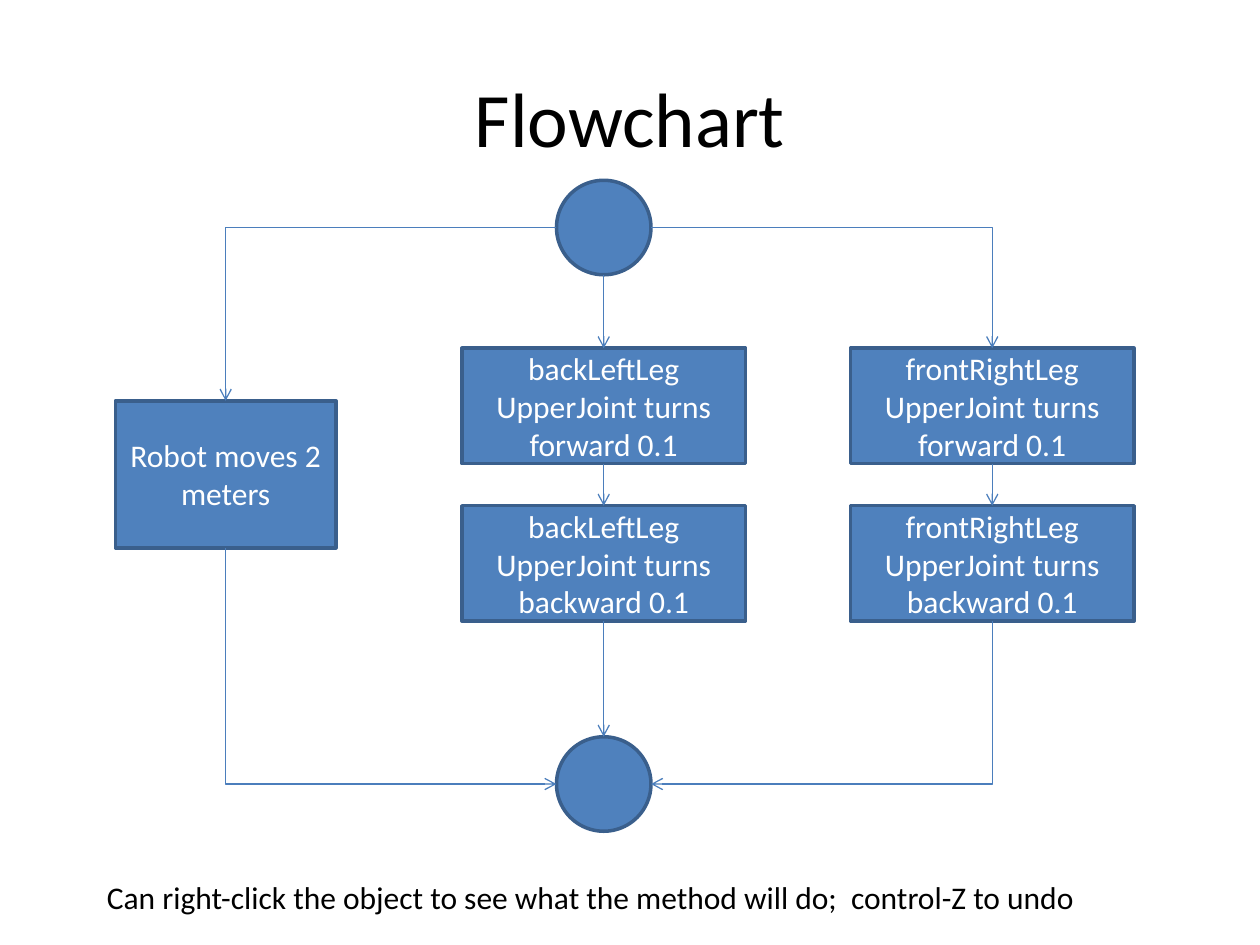
from pptx import Presentation
from pptx.util import Pt
from pptx.dml.color import RGBColor
from pptx.enum.shapes import MSO_SHAPE as Kind, MSO_CONNECTOR as Link
from pptx.enum.text import PP_ALIGN as Align, MSO_ANCHOR as Anchor, MSO_AUTO_SIZE as Auto
from pptx.oxml.ns import qn
from lxml.etree import SubElement

tint = RGBColor.from_string


def put(frame, text, size, hue, align):
    frame.vertical_anchor = Anchor.MIDDLE
    para = frame.paragraphs[0]
    para.alignment = align
    run = para.add_run()
    run.text = text
    run.font.size = Pt(size)
    run.font.name = "Calibri"
    run.font.color.rgb = tint(hue)


def node(kind, x, y, w, h):
    shape = slide.shapes.add_shape(kind, Pt(x), Pt(y), Pt(w), Pt(h))
    shape.shadow.inherit = False
    shape.fill.solid()
    shape.fill.fore_color.rgb = tint("4F81BD")
    shape.line.color.rgb = tint("3A5F8C")
    shape.line.width = Pt(2)
    return shape


deck = Presentation()
deck.slide_width, deck.slide_height = Pt(720), Pt(540)
slide = deck.slides.add_slide(deck.slide_layouts[5])

title = slide.shapes.title
title.left, title.top, title.width, title.height = Pt(36), Pt(21.6), Pt(648), Pt(90)
put(title.text_frame, "Flowchart", 44, "000000", Align.CENTER)

left, mid, right = 129, 345, 567
start, end, rad = 130, 448, 27
first, second, tall = 199, 289, 66
top, base = 229, 313

for y in (start, end):
    node(Kind.FLOWCHART_CONNECTOR, mid - rad, y - rad, 2 * rad, 2 * rad)

steps = [(left, top, 126, base - top, "Robot moves 2 meters")]
for x, leg in ((mid, "backLeftLeg"), (right, "frontRightLeg")):
    for y, way in ((first, "forward"), (second, "backward")):
        steps.append((x, y, 162, tall, f"{leg} UpperJoint turns {way} 0.1"))
for x, y, w, h, text in steps:
    box = node(Kind.FLOWCHART_PROCESS, x - w / 2, y, w, h)
    put(box.text_frame, text, 18, "FFFFFF", Align.CENTER)

arrows = [
    (mid, start + rad, mid, first, "line"),
    (mid, first + tall, mid, second, "line"),
    (mid, second + tall, mid, end - rad, "line"),
    (right, first + tall, right, second, "line"),
    (mid + rad, start, right, first, "across"),
    (mid - rad, start, left, top, "across"),
    (left, base, mid - rad, end, "down"),
    (right, second + tall, mid + rad, end, "down"),
]
for x1, y1, x2, y2, turn in arrows:
    link = Link.STRAIGHT if turn == "line" else Link.ELBOW
    arrow = slide.shapes.add_connector(link, Pt(x1), Pt(y1), Pt(x2), Pt(y2))
    arrow.line.color.rgb = tint("4B7EBC")
    arrow.line.width = Pt(0.75)
    props = arrow.element.spPr
    SubElement(props.find(qn("a:ln")), qn("a:tailEnd"), type="arrow")
    SubElement(props, qn("a:effectLst"))
    if turn != "line":
        props.find(qn("a:prstGeom")).set("prst", "bentConnector2")
    if turn == "down":
        w, h = abs(y2 - y1), abs(x2 - x1)
        arrow.left, arrow.top = Pt((x1 + x2 - w) / 2), Pt((y1 + y2 - h) / 2)
        arrow.width, arrow.height = Pt(w), Pt(h)
        form = props.find(qn("a:xfrm"))
        form.set("rot", str((270 if x2 > x1 else 90) * 60000))
        form.set("flipH", "1" if x2 > x1 else "0")

note = slide.shapes.add_textbox(Pt(54), Pt(498), Pt(574.5), Pt(29)).text_frame
note.word_wrap = False
note.auto_size = Auto.SHAPE_TO_FIT_TEXT
hint = "Can right-click the object to see what the method will do;  control-Z to undo"
put(note, hint, 18, "000000", Align.LEFT)

deck.save("out.pptx")
